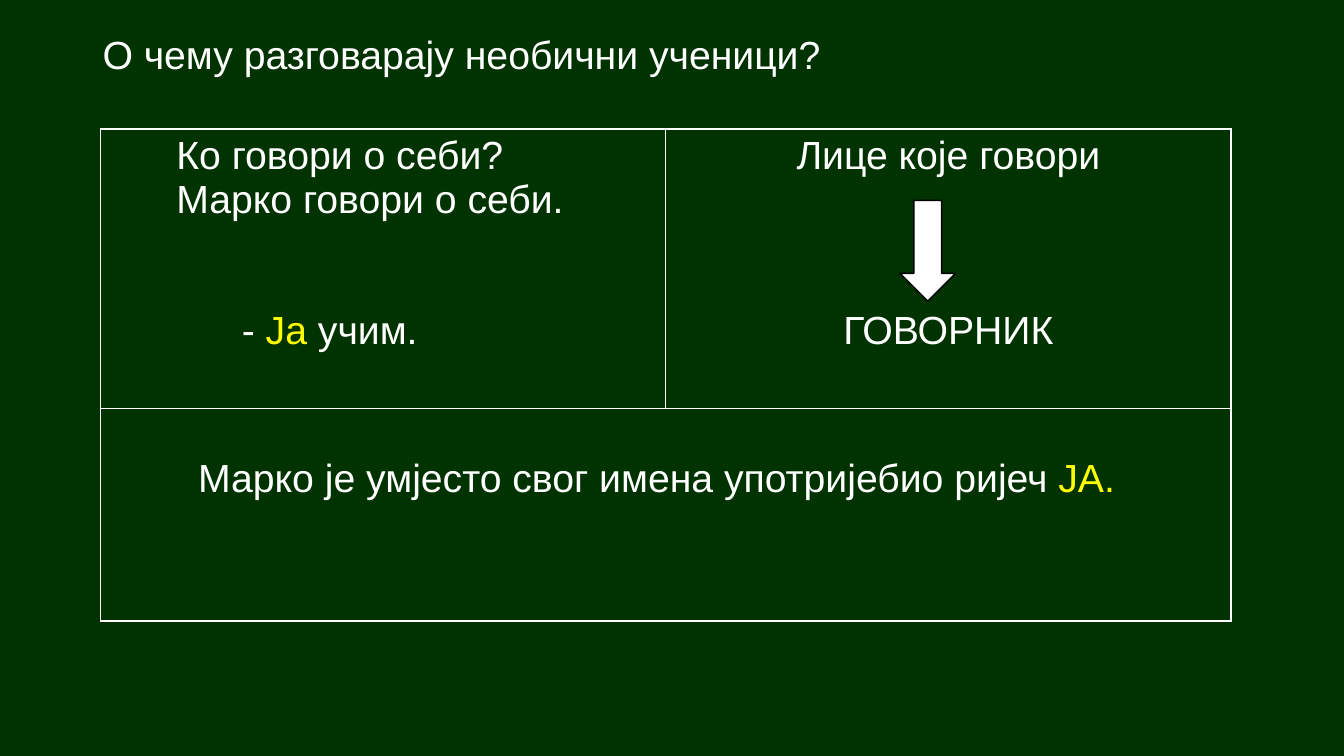
from lxml import etree
from pptx import Presentation
from pptx import util as u
from pptx.dml.color import RGBColor
from pptx.enum import shapes, text
from pptx.oxml import ns

COLORS = {"board": "003300", "chalk": "FFFFFF", "accent": "FFFF00", "outline": "000000"}
FONT = "Arial"
TEXT_SIZE = u.Pt(28)
LINE = 31.3  # height of one text line in points


def color(name):
    return RGBColor.from_string(COLORS[name])


def add_span(para, words, shade="chalk"):
    span = para.add_run()
    span.text = words
    span.font.name = FONT
    span.font.size = TEXT_SIZE
    span.font.color.rgb = color(shade)


def add_title(page, left, top, width, height):
    box = page.shapes.title
    box.left, box.top, box.width, box.height = left, top, width, height
    frame = box.text_frame
    frame.auto_size = text.MSO_AUTO_SIZE.NONE
    frame.vertical_anchor = text.MSO_ANCHOR.MIDDLE
    para = frame.paragraphs[0]
    para.alignment = text.PP_ALIGN.LEFT
    para.line_spacing = 0.9
    add_span(para, "О чему разговарају необични ученици?")


def draw_borders(cell):
    properties = cell._tc.get_or_add_tcPr()
    for index, side in enumerate(("lnL", "lnR", "lnT", "lnB")):
        line = etree.Element(ns.qn(f"a:{side}"), w=str(u.Pt(1)))
        fill = etree.SubElement(line, ns.qn("a:solidFill"))
        etree.SubElement(fill, ns.qn("a:srgbClr"), val=COLORS["chalk"])
        properties.insert(index, line)


def fill_cell(cell, rows, align=text.PP_ALIGN.LEFT):
    """Write rows of (indent, blank lines above, spans) into a cell."""
    for index, (indent, gap, spans) in enumerate(rows):
        frame = cell.text_frame
        para = frame.add_paragraph() if index else frame.paragraphs[0]
        para._p.get_or_add_pPr().set("marL", str(u.Cm(indent)))
        para.alignment = align
        if gap:
            para.space_before = u.Pt(gap * LINE)
        for span in spans:
            add_span(para, *span)


def add_speaker_table(page, left, top, width, height):
    table = page.shapes.add_table(2, 2, left, top, width, height).table
    table.first_row = table.horz_banding = False
    for column in table.columns:
        column.width = width // 2
    table.rows[0].height = u.Cm(7.04)
    table.rows[1].height = height - table.rows[0].height
    for cell in table.iter_cells():
        cell.fill.background()
        draw_borders(cell)
    speech, speaker, rule = table.cell(0, 0), table.cell(0, 1), table.cell(1, 0)
    rule.merge(table.cell(1, 1))
    fill_cell(speech, [
        (1.65, 0, [("Ко говори о себи?",)]),
        (1.65, 0, [("Марко говори о себи.",)]),
        (3.3, 2, [("- ",), ("Ја ", "accent"), ("учим.",)]),
    ])
    fill_cell(speaker, [
        (0, 0, [("Лице које говори",)]),
        (0, 3, [("ГОВОРНИК",)]),
    ], text.PP_ALIGN.CENTER)
    rule.margin_top = u.Cm(1.23)
    fill_cell(rule, [
        (2.2, 0, [("Марко је умјесто свог имена употријебио ријеч ",), ("ЈА.", "accent")]),
    ])
    add_arrow(page, left + u.Cm(20.14), top + u.Cm(1.8), u.Cm(1.4), u.Cm(2.54))


def add_arrow(page, left, top, width, height):
    arrow = page.shapes.add_shape(shapes.MSO_SHAPE.DOWN_ARROW, left, top, width, height)
    arrow.shadow.inherit = False
    arrow.fill.solid()
    arrow.fill.fore_color.rgb = color("chalk")
    arrow.line.color.rgb = color("outline")
    arrow.line.width = u.Pt(1)


def main():
    deck = Presentation()
    deck.slide_width, deck.slide_height = u.Cm(33.87), u.Cm(19.05)
    page = deck.slides.add_slide(deck.slide_layouts.get_by_name("Title Only"))
    page.background.fill.solid()
    page.background.fill.fore_color.rgb = color("board")
    add_title(page, u.Cm(2.33), u.Cm(0.56), u.Cm(29.21), u.Cm(1.75))
    add_speaker_table(page, u.Cm(2.54), u.Cm(3.25), u.Cm(28.48), u.Cm(12.4))
    deck.save("out.pptx")


if __name__ == "__main__":
    main()
